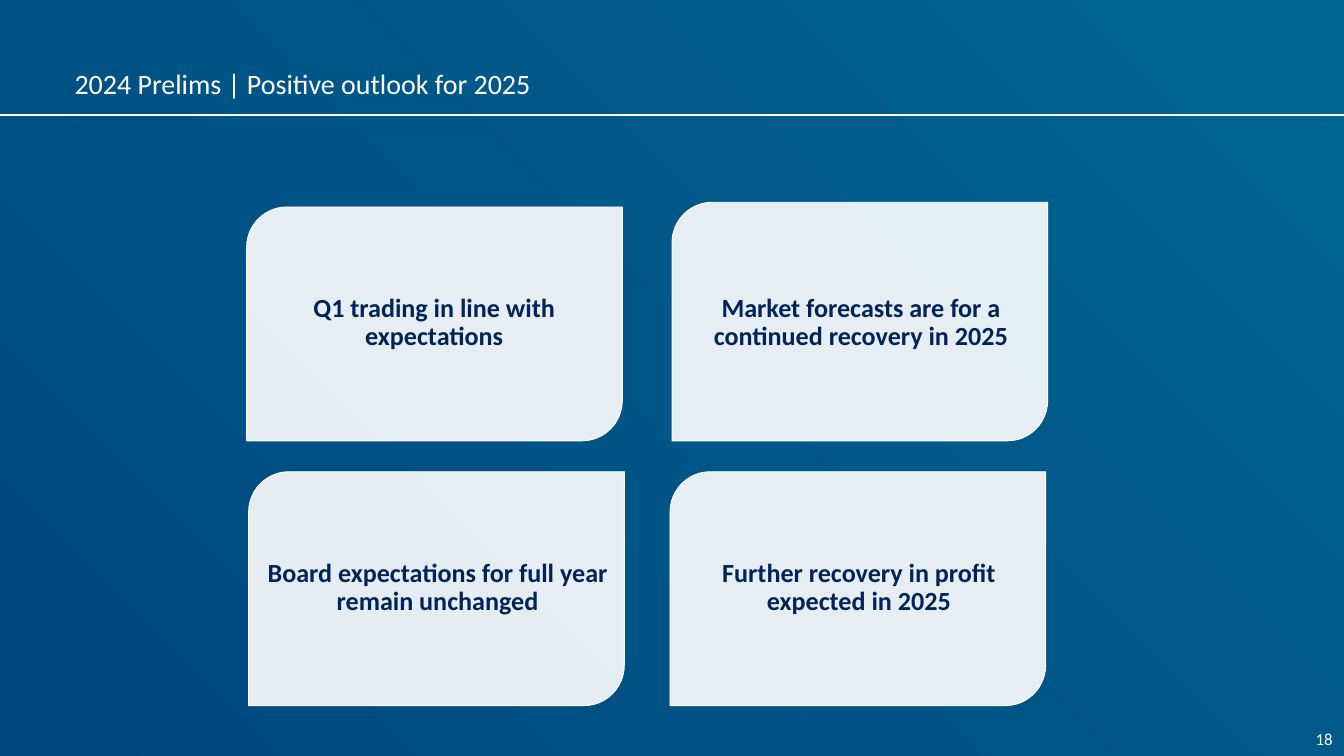
import pptx
import pptx.dml.color
import pptx.enum.shapes
import pptx.enum.text
import pptx.oxml
import pptx.oxml.ns
import pptx.util

Inches = pptx.util.Inches
Pt = pptx.util.Pt
RGB = pptx.dml.color.RGBColor.from_string
ALIGN = pptx.enum.text.PP_ALIGN
COLORS = {"white": "FFFFFF", "navy": "002459", "deep": "00477E", "teal": "016591"}


def set_text(sp, text, size, color, align, margin=0, bold=False, spacing=None):
    tf = sp.text_frame
    tf.word_wrap = True
    tf.auto_size = pptx.enum.text.MSO_AUTO_SIZE.NONE
    tf.vertical_anchor = pptx.enum.text.MSO_ANCHOR.TOP
    tf.margin_left = tf.margin_right = Inches(margin)
    tf.margin_top = tf.margin_bottom = Inches(margin / 2)
    p = tf.paragraphs[0]
    p.alignment = align
    p.line_spacing = spacing
    r = p.add_run()
    r.text = text
    r.font.name = "Calibri"
    r.font.size = Pt(size)
    r.font.bold = bold
    r.font.color.rgb = RGB(COLORS[color])


prs = pptx.Presentation()
prs.slide_width = Inches(20)
prs.slide_height = Inches(11.25)
s = prs.slides.add_slide(prs.slide_layouts[5])

bg = s.background.fill
bg.gradient()
bg.gradient_angle = 45
for stop, name in zip(bg.gradient_stops, ("deep", "teal")):
    stop.color.rgb = RGB(COLORS[name])

title = s.shapes.title
title.left, title.top = Inches(1.11), Inches(0.9)
title.width, title.height = Inches(12.96), Inches(0.55)
set_text(title, "2024 Prelims | Positive outlook for 2025", 30, "white", ALIGN.LEFT, spacing=Pt(42))

rule = s.shapes.add_connector(
    pptx.enum.shapes.MSO_CONNECTOR.STRAIGHT, 0, Inches(1.71), Inches(20), Inches(1.71))
rule.line.color.rgb = RGB(COLORS["white"])
rule.line.width = Pt(1.5)
pptx.oxml.ns.qn("a:effectLst")
rule._element.spPr.append(pptx.oxml.parse_xml(
    "<a:effectLst %s/>" % pptx.oxml.ns.nsdecls("a")))

cards = [
    (3.67, 3.08, 3.48, 3.65, 4.39, "Q1 trading in line with expectations"),
    (10, 3.01, 3.55, 10, 4.39, "Market forecasts are for a continued recovery in 2025"),
    (3.7, 7.02, 3.48, 3.7, 8.33, "Board expectations for full year remain unchanged"),
    (9.97, 7.02, 3.48, 9.97, 8.33, "Further recovery in profit expected in 2025"),
]
for left, top, height, text_left, text_top, text in cards:
    card = s.shapes.add_shape(
        pptx.enum.shapes.MSO_SHAPE.ROUND_2_DIAG_RECTANGLE,
        Inches(left), Inches(top), Inches(5.59), Inches(height))
    card.adjustments[0] = 0.6 / height
    card.shadow.inherit = False
    card.fill.solid()
    card.fill.fore_color.rgb = RGB(COLORS["white"])
    card.fill._xPr.find(".//" + pptx.oxml.ns.qn("a:srgbClr")).append(pptx.oxml.parse_xml(
        '<a:alpha %s val="90000"/>' % pptx.oxml.ns.nsdecls("a")))
    card.line.color.rgb = RGB(COLORS["white"])
    card.line.width = Pt(1)
    label = s.shapes.add_textbox(
        Inches(text_left), Inches(text_top), Inches(5.62), Inches(0.85))
    set_text(label, text, 28, "navy", ALIGN.CENTER, bold=True, spacing=0.9)

number = s.shapes.add_textbox(Inches(17.6), Inches(10.8), Inches(2.33), Inches(0.4))
set_text(number, "18", 18, "white", ALIGN.RIGHT, margin=0.1)

prs.save("out.pptx")
